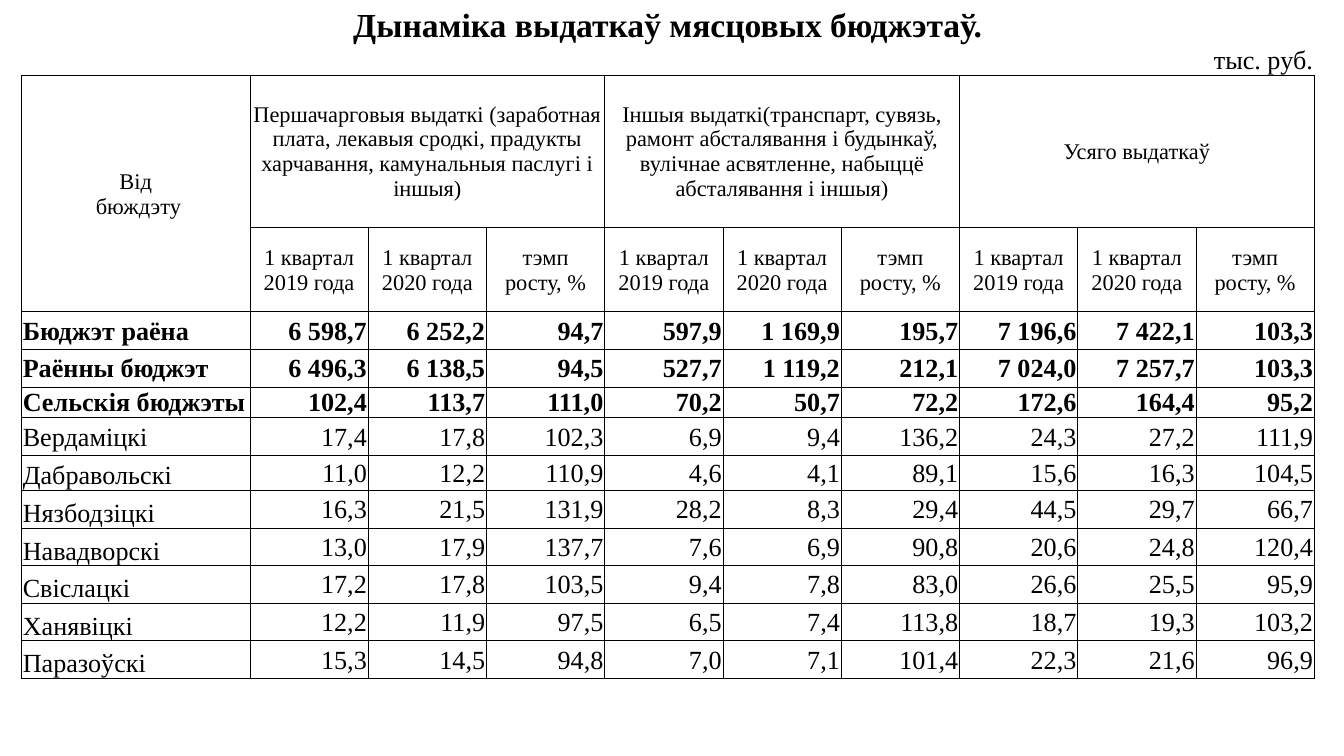
from lxml import etree
from pptx import Presentation
from pptx import util as u
from pptx.dml.color import RGBColor
from pptx.enum import text
from pptx.oxml.ns import qn

BLACK = RGBColor(0, 0, 0)
FACE = "Times New Roman"
PLAIN = "{2D5ABB26-0587-4C30-8999-92F81FD0307C}"  # table style without lines
WIDE = 10
HIGH = WIDE * 9 / 16
LEFT, TOP = 0.16, 0.03
COLS = [1.7] + [0.88] * 9
ROWS = [0.3, 0.23, 1.13, 0.63, 0.28, 0.28, 0.23, 0.28, 0.26] + [0.28] * 5
HEAD, SUB, BODY = 2, 3, 4  # first rows of the table parts
BOLD = 3  # total rows in bold

GROUPS = [
    "Першачарговыя выдаткі (заработная плата, лекавыя сродкі, "
    "прадукты харчавання, камунальныя паслугі і іншыя)",
    "Іншыя выдаткі(транспарт, сувязь, рамонт абсталявання і будынкаў, "
    "вулічнае асвятленне, набыццё абсталявання і іншыя)",
    "Усяго выдаткаў",
]
TERMS = ["1 квартал 2019 года", "1 квартал 2020 года", "тэмп\nросту, %"]
DATA = [
    ("Бюджэт раёна", "6 598,7|6 252,2|94,7|597,9|1 169,9|195,7|7 196,6|7 422,1|103,3"),
    ("Раённы бюджэт", "6 496,3|6 138,5|94,5|527,7|1 119,2|212,1|7 024,0|7 257,7|103,3"),
    ("Сельскія бюджэты", "102,4|113,7|111,0|70,2|50,7|72,2|172,6|164,4|95,2"),
    ("Вердаміцкі", "17,4|17,8|102,3|6,9|9,4|136,2|24,3|27,2|111,9"),
    ("Дабравольскі", "11,0|12,2|110,9|4,6|4,1|89,1|15,6|16,3|104,5"),
    ("Нязбодзіцкі", "16,3|21,5|131,9|28,2|8,3|29,4|44,5|29,7|66,7"),
    ("Навадворскі", "13,0|17,9|137,7|7,6|6,9|90,8|20,6|24,8|120,4"),
    ("Свіслацкі", "17,2|17,8|103,5|9,4|7,8|83,0|26,6|25,5|95,9"),
    ("Ханявіцкі", "12,2|11,9|97,5|6,5|7,4|113,8|18,7|19,3|103,2"),
    ("Паразоўскі", "15,3|14,5|94,8|7,0|7,1|101,4|22,3|21,6|96,9"),
]

MID, LOW = text.MSO_ANCHOR.MIDDLE, text.MSO_ANCHOR.BOTTOM
START, MIDST, END = text.PP_ALIGN.LEFT, text.PP_ALIGN.CENTER, text.PP_ALIGN.RIGHT


def rule(cell, sides):
    """Draw thin lines on the sides named by letters; hide the others."""
    props = cell._tc.get_or_add_tcPr()
    for side in "LRTB":
        line = etree.SubElement(props, qn("a:ln" + side), w=str(u.Pt(0.5)))
        if side in sides:
            fill = etree.SubElement(line, qn("a:solidFill"))
            etree.SubElement(fill, qn("a:srgbClr"), val=str(BLACK))
        else:
            etree.SubElement(line, qn("a:noFill"))


def prep(cell, row):
    """Set lines, fill, margins and a small size for a cell with no text."""
    rule(cell, "" if row == 0 else "B" if row == 1 else "LRTB")
    cell.fill.background()
    cell.margin_left = cell.margin_right = cell.margin_top = u.Inches(0.01)
    cell.margin_bottom = 0
    para = cell.text_frame.paragraphs[0]._p
    etree.SubElement(para, qn("a:endParaRPr"), sz="1200")


def write(cell, words, size, align=MIDST, anchor=MID, bold=False):
    cell.vertical_anchor = anchor
    frame = cell.text_frame
    for i, line in enumerate(words.split("\n")):
        para = frame.add_paragraph() if i else frame.paragraphs[0]
        para.alignment = align
        run = para.add_run()
        run.text = line
        font = run.font
        font.name, font.size, font.bold = FACE, u.Pt(size), bold
        font.color.rgb = BLACK


def make_grid(slide):
    frame = slide.shapes.add_table(
        len(ROWS), len(COLS), u.Inches(LEFT), u.Inches(TOP),
        u.Inches(sum(COLS)), u.Inches(sum(ROWS)))
    grid = frame.table
    grid.first_row = grid.horz_banding = False
    grid._tbl.tblPr.find(qn("a:tableStyleId")).text = PLAIN
    for col, width in zip(grid.columns, COLS):
        col.width = u.Inches(width)
    for r, height in enumerate(ROWS):
        grid.rows[r].height = u.Inches(height)
        for c in range(len(COLS)):
            prep(grid.cell(r, c), r)
    return grid


def fill_head(grid):
    # Title and unit
    last = len(COLS) - 1
    grid.cell(0, 0).merge(grid.cell(0, last))
    write(grid.cell(0, 0), "Дынаміка выдаткаў мясцовых бюджэтаў.", 18,
          anchor=LOW, bold=True)
    for c in (1, 3, 5):
        grid.cell(1, c).merge(grid.cell(1, c + 1))
    write(grid.cell(1, last), "тыс. руб.", 14, END, LOW)

    # Column heads: three groups of three terms
    grid.cell(HEAD, 0).merge(grid.cell(SUB, 0))
    write(grid.cell(HEAD, 0), "Від\n бюждэту", 12)
    for g, group in enumerate(GROUPS):
        first = 1 + g * len(TERMS)
        grid.cell(HEAD, first).merge(grid.cell(HEAD, first + len(TERMS) - 1))
        write(grid.cell(HEAD, first), group, 12)
        for t, term in enumerate(TERMS):
            # The very first term is split into two paragraphs
            words = "1 квартал\n2019 года" if g == t == 0 else term
            write(grid.cell(SUB, first + t), words, 12)


def fill_body(grid):
    for i, (name, values) in enumerate(DATA):
        bold = i < BOLD
        write(grid.cell(BODY + i, 0), name, 14, START,
              LOW if i > BOLD else MID, bold)
        for c, value in enumerate(values.split("|"), 1):
            write(grid.cell(BODY + i, c), value, 14, END, MID, bold)


def main():
    deck = Presentation()
    deck.slide_width, deck.slide_height = u.Inches(WIDE), u.Inches(HIGH)
    slide = deck.slides.add_slide(deck.slide_layouts[6])
    grid = make_grid(slide)
    fill_head(grid)
    fill_body(grid)
    deck.save("out.pptx")


if __name__ == "__main__":
    main()
